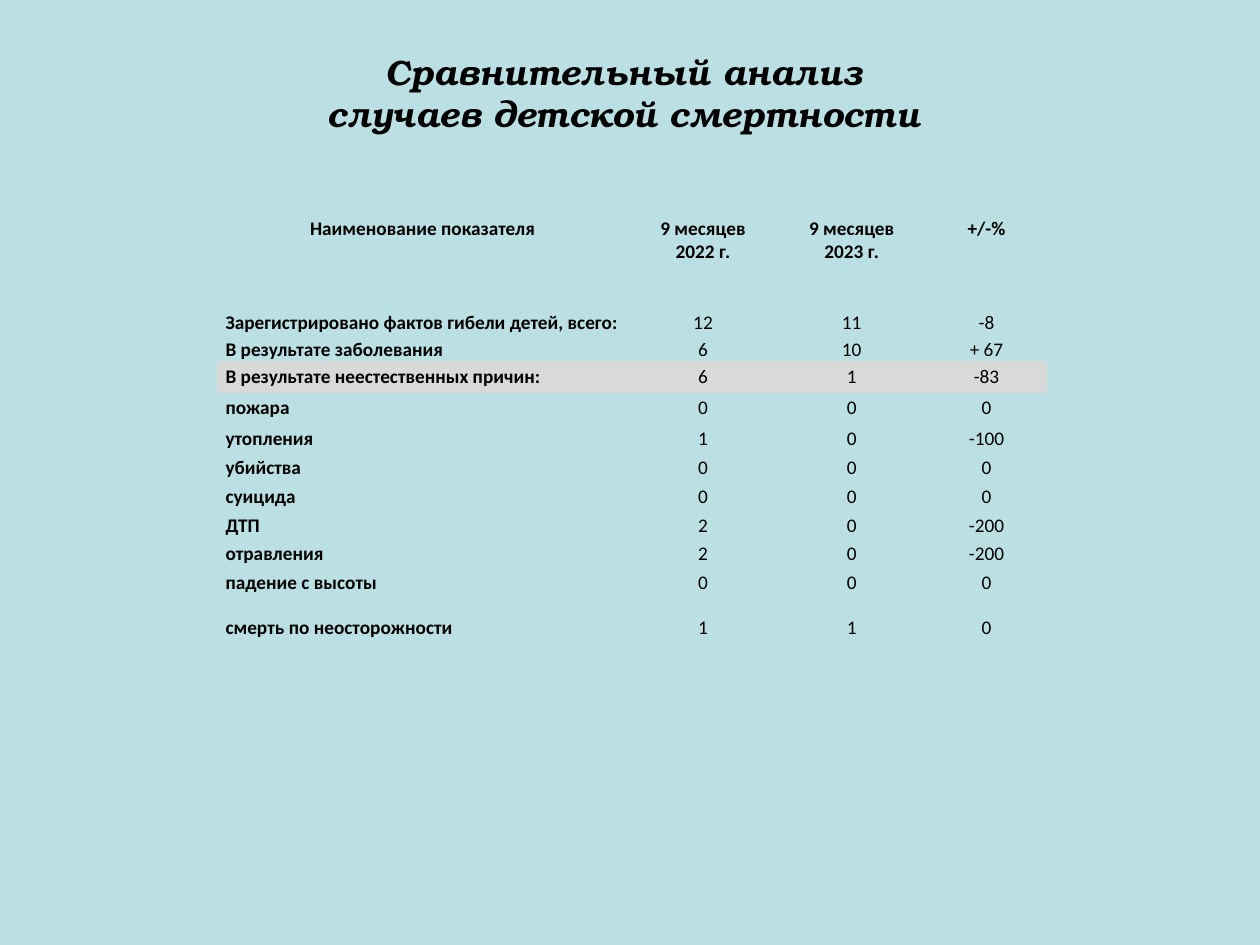
from pptx import Presentation
from pptx.dml.color import RGBColor
from pptx.enum.text import MSO_ANCHOR as Anchor, PP_ALIGN as Align
from pptx.util import Inches, Pt

NO_STYLE_NO_GRID = "{2D5ABB26-0587-4C30-8999-92F81FD0307C}"

HEADERS = ["Наименование показателя", "9 месяцев\n2022 г.", "9 месяцев\n2023 г.", "+/-%"]
CAUSES = [
    ["Зарегистрировано фактов гибели детей, всего:", "12", "11", "-8"],
    ["В результате заболевания", "6", "10", "+ 67"],
    ["В результате неестественных причин:", "6", "1", "-83"],
    ["пожара", "0", "0", "0"],
    ["утопления", "1", "0", "-100"],
    ["убийства", "0", "0", "0"],
    ["суицида", "0", "0", "0"],
    ["ДТП", "2", "0", "-200"],
    ["отравления", "2", "0", "-200"],
    ["падение с высоты\nсмерть по неосторожности", "0\n1", "0\n1", "0\n0"],
]
COLUMN_WIDTHS = [3.27, 1.18, 1.18, 0.96]
ROW_HEIGHTS = [0.36, 0.57, 0.21, 0.25, 0.24] + [0.23] * 5 + [0.57]
TOTAL_ROW, UNNATURAL_ROW = 1, 3


def color(hex_value):
    return RGBColor.from_string(hex_value)


class SlideBuilder:
    title_font, body_font = "TeX Gyre Bonum", "Calibri"
    background, ink, highlight = "BBE0E3", "000000", "D9D9D9"

    def __init__(self, slide):
        self.slide = slide
        fill = slide.background.fill
        fill.solid()
        fill.fore_color.rgb = color(self.background)

    def format_runs(self, paragraph, font_name, size, bold, italic=False):
        for run in paragraph.runs:
            font = run.font
            font.name, font.size = font_name, Pt(size)
            font.bold, font.italic = bold, italic
            font.color.rgb = color(self.ink)

    def title(self, text, left, top, width, height):
        box = self.slide.shapes.add_textbox(
            Inches(left), Inches(top), Inches(width), Inches(height))
        frame = box.text_frame
        frame.word_wrap = True
        frame.vertical_anchor = Anchor.MIDDLE
        frame.text = text
        heading = frame.paragraphs[0]
        heading.alignment = Align.CENTER
        self.format_runs(heading, self.title_font, 20, True, True)

    def cell(self, cell, text, row, column):
        cell.margin_left = cell.margin_right = Inches(0.07)
        cell.margin_top = cell.margin_bottom = 0
        # The total stands at the foot of its taller row
        cell.vertical_anchor = Anchor.BOTTOM if row == TOTAL_ROW else Anchor.TOP
        if row == UNNATURAL_ROW:
            cell.fill.solid()
            cell.fill.fore_color.rgb = color(self.highlight)
        else:
            cell.fill.background()
        cell.text_frame.text = text
        is_header, is_label = row == 0, column == 0
        for paragraph in cell.text_frame.paragraphs:
            paragraph.alignment = Align.JUSTIFY if is_label and not is_header else Align.CENTER
            if not is_header:
                paragraph.line_spacing = 1.15
                paragraph.space_after = Pt(10)
            self.format_runs(paragraph, self.body_font, 11, is_header or is_label)

    def table(self, rows, left, top, widths, heights):
        frame = self.slide.shapes.add_table(
            len(rows), len(widths), Inches(left), Inches(top),
            Inches(sum(widths)), Inches(sum(heights)))
        table = frame.table
        table.first_row = table.horz_banding = False
        table._tbl.tblPr.find("{*}tableStyleId").text = NO_STYLE_NO_GRID
        for column, width in zip(table.columns, widths):
            column.width = Inches(width)
        for row, height in zip(table.rows, heights):
            row.height = Inches(height)
        for r, texts in enumerate(rows):
            for c, text in enumerate(texts):
                self.cell(table.cell(r, c), text, r, c)


def main():
    deck = Presentation()
    deck.slide_width, deck.slide_height = Inches(10), Inches(7.5)
    builder = SlideBuilder(deck.slides.add_slide(deck.slide_layouts[6]))

    # Heading
    builder.title("Сравнительный анализ \vслучаев детской смертности ", 0.5, 0.3, 9, 0.87)

    # Causes by period
    builder.table([HEADERS] + CAUSES, 1.72, 1.72, COLUMN_WIDTHS, ROW_HEIGHTS)

    deck.save("out.pptx")


if __name__ == "__main__":
    main()
